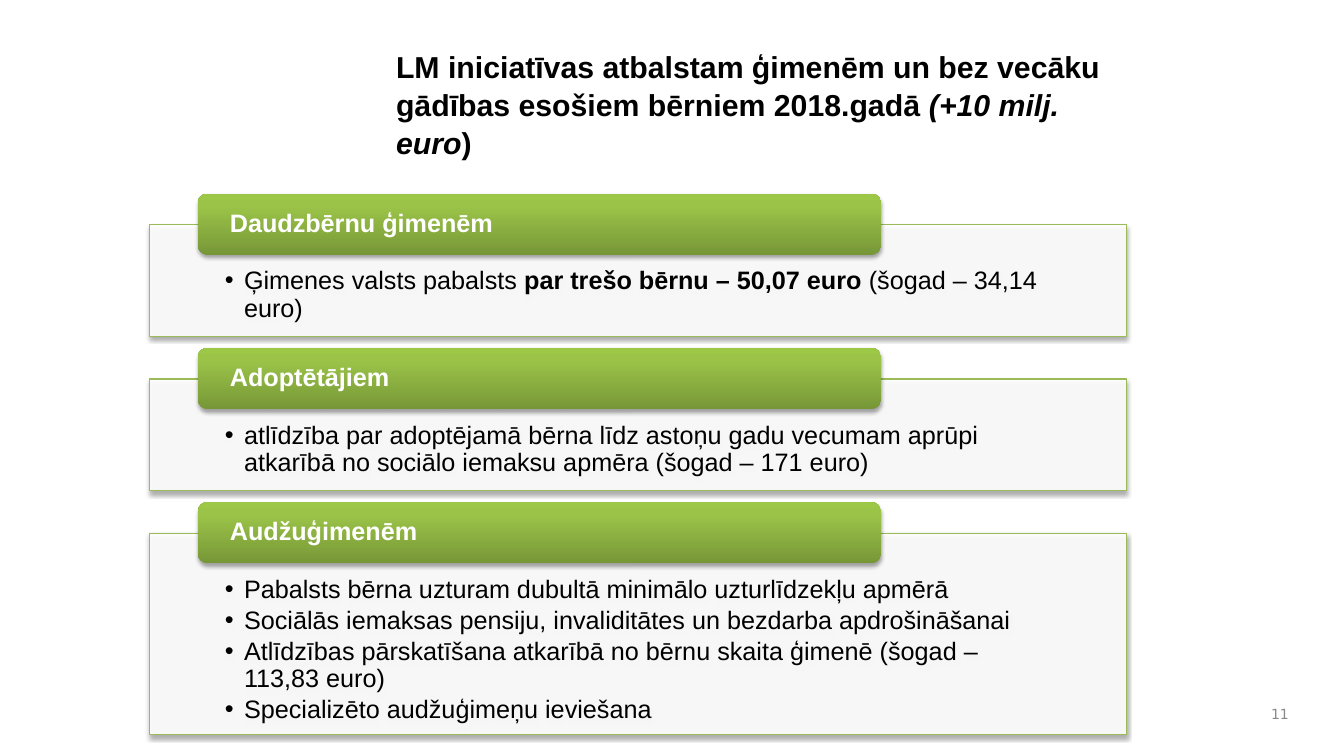
from lxml.etree import SubElement
from copy import deepcopy
from pptx import Presentation
from pptx.dml.color import RGBColor
from pptx.enum.shapes import MSO_SHAPE
from pptx.enum.text import MSO_ANCHOR, PP_ALIGN
from pptx.oxml.ns import qn
from pptx.util import Inches, Pt

BLACK = RGBColor(0, 0, 0)
WHITE = RGBColor(255, 255, 255)
GRAY = RGBColor(0x89, 0x89, 0x89)
GREEN = RGBColor(0x9B, 0xBB, 0x59)
STOPS = [
    (0, RGBColor(0x77, 0x97, 0x37)),
    (0.8, RGBColor(0x9B, 0xC3, 0x48)),
    (1, RGBColor(0x9D, 0xC7, 0x46)),
]
TITLE = [
    ("LM iniciatīvas atbalstam ģimenēm un bez vecāku "
     "gādības esošiem bērniem 2018.gadā ", True, False),
    ("(+10 milj. euro", True, True),
    (")", True, False),
]
GROUPS = [
    ("Daudzbērnu ģimenēm", 1.11, [
        [("Ģimenes valsts pabalsts ", False, False),
         ("par trešo bērnu – 50,07 euro ", True, False),
         ("(šogad – 34,14 euro)", False, False)],
    ]),
    ("Adoptētājiem", 1.11, [
        [("atlīdzība par adoptējamā bērna līdz astoņu gadu vecumam aprūpi "
          "atkarībā no sociālo iemaksu apmēra (šogad – 171 euro)", False, False)],
    ]),
    ("Audžuģimenēm", 2, [
        [("Pabalsts bērna uzturam dubultā minimālo uzturlīdzekļu apmērā", False, False)],
        [("Sociālās iemaksas pensiju, invaliditātes un bezdarba apdrošināšanai", False, False)],
        [("Atlīdzības pārskatīšana atkarībā no bērnu skaita ģimenē "
          "(šogad – 113,83 euro)", False, False)],
        [("Specializēto audžuģimeņu ieviešana", False, False)],
    ]),
]


def add_runs(para, parts, size, color, face="Arial"):
    """Add styled runs given as (text, bold, italic)."""
    for text, bold, slant in parts:
        run = para.add_run()
        run.text = text
        font = run.font
        font.name, font.size = face, Pt(size)
        font.bold, font.italic = bold, slant
        font.color.rgb = color


def set_frame(frame, inset, anchor):
    """Set wrapping, anchor and insets (left, top, right, bottom)."""
    frame.word_wrap = True
    frame.vertical_anchor = anchor
    left, top, right, bottom = map(Inches, inset)
    frame.margin_left, frame.margin_right = left, right
    frame.margin_top, frame.margin_bottom = top, bottom


def add_label(slide, box, anchor):
    """Add a text box and return its first paragraph."""
    frame = slide.shapes.add_textbox(*map(Inches, box)).text_frame
    set_frame(frame, (0.1, 0.05, 0.1, 0.05), anchor)
    return frame.paragraphs[0]


def add_shade(shape):
    """Give a shape a soft shadow below it."""
    shape.shadow.inherit = False
    effect = shape._element.spPr.find(qn("a:effectLst"))
    outer = SubElement(effect, qn("a:outerShdw"), blurRad=str(Pt(3.1)),
                       dist=str(Pt(1.8)), dir="5400000", rotWithShape="0")
    color = SubElement(outer, qn("a:srgbClr"), val="000000")
    SubElement(color, qn("a:alpha"), val="35000")


def add_bullet(para):
    """Set a hanging round bullet."""
    props = para._p.get_or_add_pPr()
    props.set("marL", str(Inches(0.19)))
    props.set("indent", str(Inches(-0.19)))
    SubElement(props, qn("a:buFont"), typeface="Arial")
    SubElement(props, qn("a:buChar"), char="•")


def add_panel(slide, top, height, items):
    """Add a framed panel with bulleted items."""
    box = map(Inches, (1.48, top, 9.69, height))
    panel = slide.shapes.add_shape(MSO_SHAPE.RECTANGLE, *box)
    panel.fill.solid()
    panel.fill.fore_color.rgb = WHITE
    color = panel._element.spPr.find(".//" + qn("a:srgbClr"))
    SubElement(color, qn("a:alpha"), val="90000")
    panel.line.color.rgb = GREEN
    panel.line.width = Pt(0.75)
    add_shade(panel)
    frame = panel.text_frame
    set_frame(frame, (0.75, 0.43, 0.75, 0.14), MSO_ANCHOR.TOP)
    for index, parts in enumerate(items):
        para = frame.add_paragraph() if index else frame.paragraphs[0]
        add_bullet(para)
        para.alignment = PP_ALIGN.LEFT
        para.line_spacing = 0.9
        para.space_after = Pt(2.7)
        add_runs(para, parts, 18, BLACK)


def add_header(slide, top, text):
    """Add a green rounded header."""
    box = map(Inches, (1.96, top, 6.78, 0.61))
    head = slide.shapes.add_shape(MSO_SHAPE.ROUNDED_RECTANGLE, *box)
    head.fill.gradient()
    head.fill.gradient_angle = 90
    stops = head._element.spPr.find(".//" + qn("a:gsLst"))
    stops.append(deepcopy(stops[0]))
    for stop, (place, color) in zip(head.fill.gradient_stops, STOPS):
        stop.position = place
        stop.color.rgb = color
    head.line.fill.background()
    add_shade(head)
    set_frame(head.text_frame, (0.29, 0, 0.29, 0), MSO_ANCHOR.MIDDLE)
    para = head.text_frame.paragraphs[0]
    para.alignment = PP_ALIGN.LEFT
    para.line_spacing = 0.9
    add_runs(para, [(text, True, False)], 18, WHITE)


def main():
    """Build the slide and save it."""
    deck = Presentation()
    deck.slide_width, deck.slide_height = Inches(13.33), Inches(7.5)
    slide = deck.slides.add_slide(deck.slide_layouts[6])
    title = add_label(slide, (3.83, 0.42, 7.33, 1.13), MSO_ANCHOR.TOP)
    title.line_spacing = 1.04
    add_runs(title, TITLE, 21.6, BLACK)
    number = add_label(slide, (12.44, 6.92, 0.44, 0.33), MSO_ANCHOR.MIDDLE)
    number.alignment = PP_ALIGN.RIGHT
    add_runs(number, [("11", False, False)], 10, GRAY, "DejaVu Sans")
    top = 2.23
    for text, height, items in GROUPS:
        add_panel(slide, top, height, items)
        add_header(slide, top - 0.31, text)
        top += height + 0.42
    deck.save("out.pptx")


if __name__ == "__main__":
    main()
